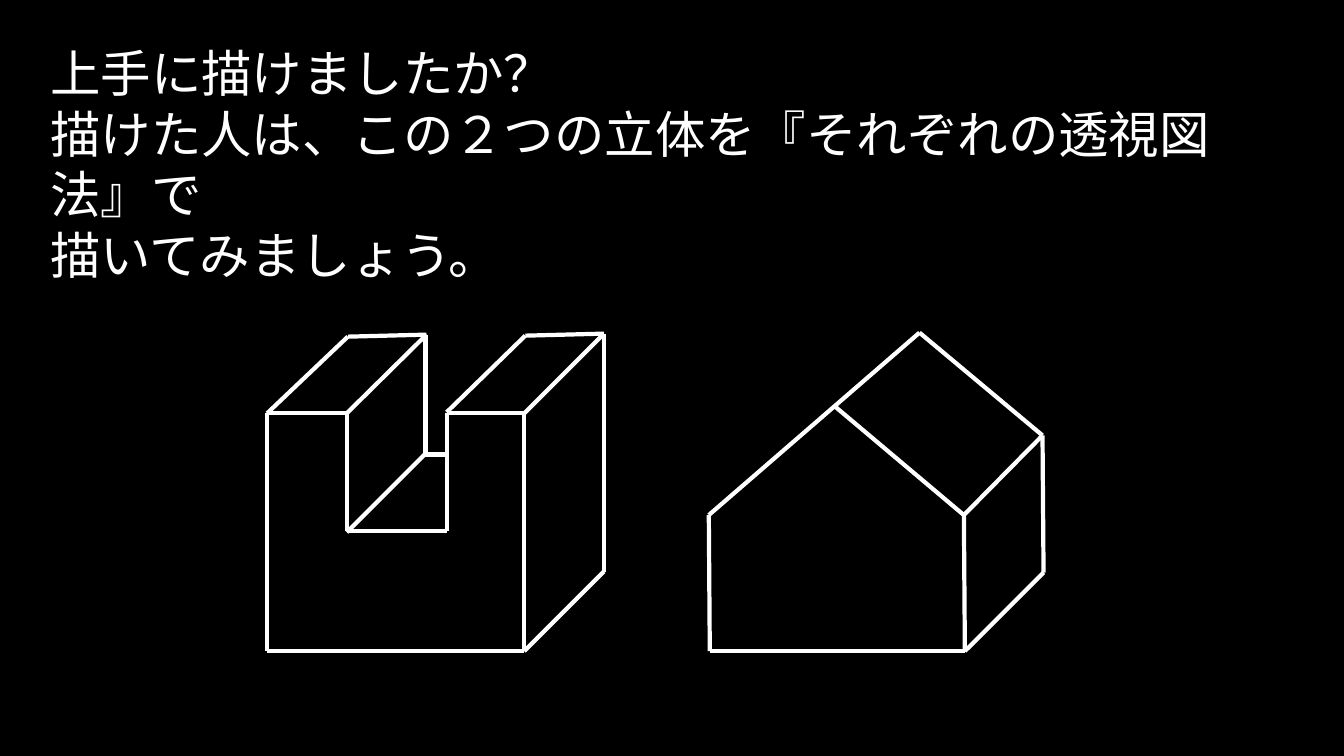
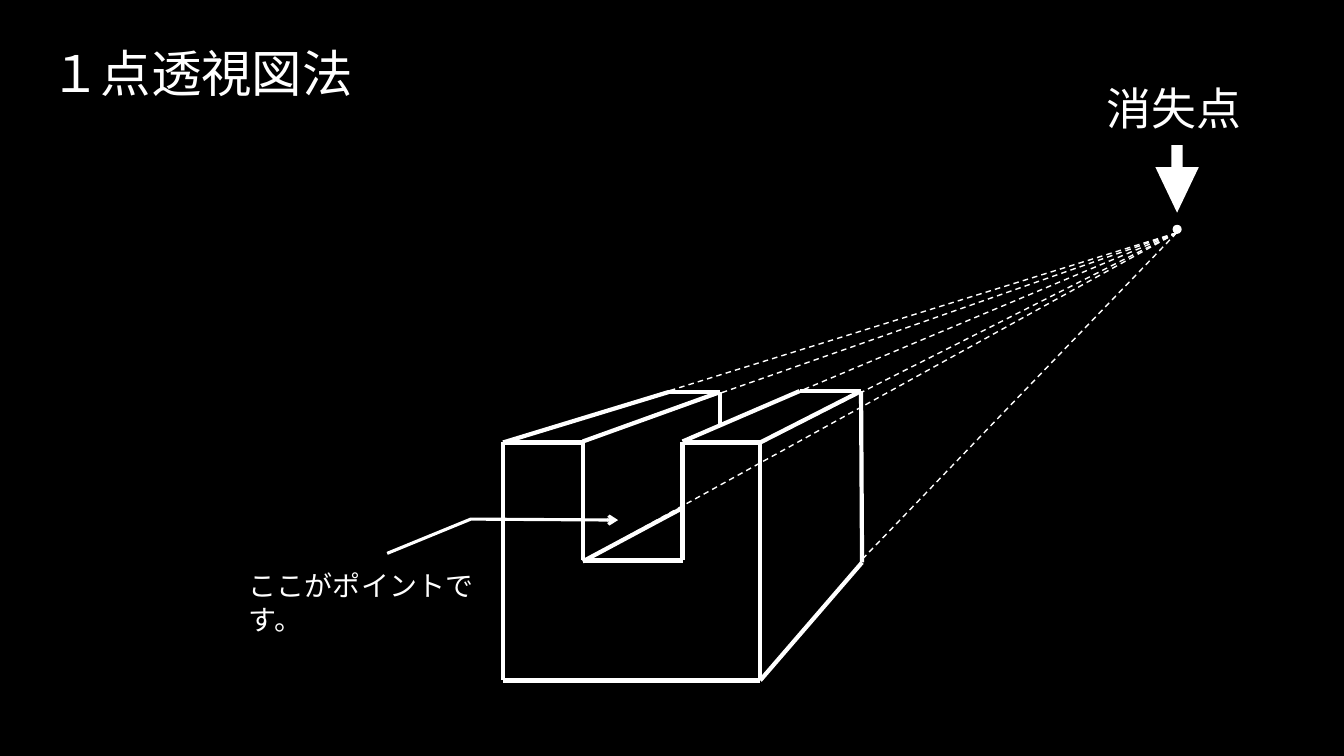
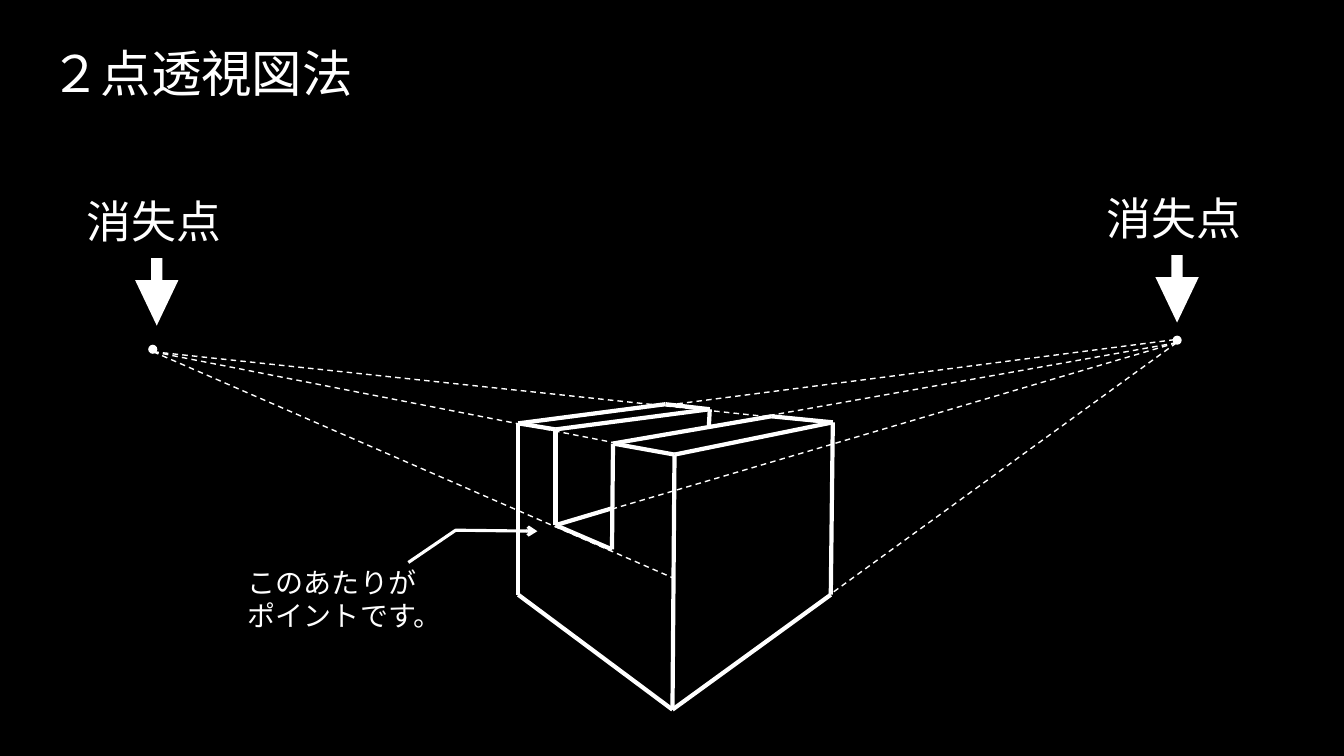
"""Build three slides on drawing solids in one- and two-point perspective."""
from itertools import pairwise

from lxml.etree import SubElement
from pptx import Presentation
from pptx.dml.color import RGBColor
from pptx.enum.dml import MSO_LINE
from pptx.enum.shapes import MSO_CONNECTOR, MSO_SHAPE
from pptx.enum.text import MSO_AUTO_SIZE, PP_ALIGN
from pptx.oxml.ns import qn
from pptx.util import Inches, Pt

FONT = "Noto Sans CJK JP"
BLACK, WHITE = "000000", "FFFFFF"
EDGE, CALLOUT, RAY = 3, 2.25, 1
TITLE_SIZE, LABEL_SIZE, NOTE_SIZE = 36, 32, 20
TITLE_LEFT, TITLE_TOP = 0.4, 0.37
DOT = 0.09
VANISHING_LABEL = "消失点"
BLOCK_FRONT = [(0, 0), (0, 2.36), (2.55, 2.36), (2.55, 0), (1.78, 0),
               (1.78, 1.17), (0.79, 1.17), (0.79, 0), (0, 0)]


def block_front(left, top):
    return [(left + x, top + y) for x, y in BLOCK_FRONT]


SLIDES = [
    {
        "title": ["上手に描けましたか？",
                  "描けた人は、この２つの立体を『それぞれの透視図法』で",
                  "描いてみましょう。"],
        "title_size": (12.6, 1.92),
        "edges": [
            block_front(2.65, 4.1),
            [(5.2, 6.46), (5.99, 5.67), (5.99, 3.31), (5.2, 4.1)],
            [(4.43, 4.09), (5.21, 3.33), (5.99, 3.31)],
            [(2.65, 4.1), (3.45, 3.34), (4.23, 3.32), (3.44, 4.1)],
            [(3.44, 5.28), (4.22, 4.5), (4.22, 3.32)],
            [(4.22, 4.51), (4.41, 4.51)],
            [(7.03, 5.11), (7.04, 6.46), (9.57, 6.46), (9.56, 5.11), (8.29, 4.04)],
            [(7.03, 5.11), (9.12, 3.3), (10.34, 4.32), (10.35, 5.68), (9.57, 6.46)],
            [(10.34, 4.32), (9.56, 5.11)],
        ],
    },
    {
        "title": ["１点透視図法"],
        "title_size": (3.43, 0.71),
        "edges": [
            block_front(4.99, 4.39),
            [(7.54, 6.75), (8.55, 5.58), (8.54, 3.88), (7.54, 4.39)],
            [(6.77, 4.38), (7.93, 3.88), (8.54, 3.88)],
            [(4.99, 4.39), (6.63, 3.89), (7.14, 3.89), (5.78, 4.38)],
            [(7.14, 3.89), (7.14, 4.23)],
            [(5.78, 5.57), (6.77, 5.04)],
        ],
        "vanishing": [
            {"label": (10.88, 0.75), "dot": (11.63, 2.23), "focus": (11.67, 2.31),
             "targets": [(4.99, 4.39), (5.78, 4.38), (6.77, 4.37),
                         (7.54, 4.4), (5.79, 5.56), (8.54, 5.56)]},
        ],
        "note": (["ここがポイントです。"], (2.37, 5.59, 2.46, 0.44)),
        "callout": [(3.84, 5.49), (4.67, 5.15), (6.13, 5.16)],
    },
    {
        "title": ["２点透視図法"],
        "title_size": (3.43, 0.71),
        "edges": [
            [(5.14, 4.2), (5.14, 5.9), (6.67, 7.04), (8.24, 5.9),
             (8.26, 4.19), (6.69, 4.51), (6.67, 7.04)],
            [(5.14, 4.2), (6.6, 4.01), (7.04, 4.06), (5.51, 4.26), (5.14, 4.2)],
            [(7.04, 4.06), (7.03, 4.24)],
            [(5.51, 4.26), (5.51, 5.21), (6.07, 5.45), (6.08, 4.4),
             (7.65, 4.13), (8.26, 4.19)],
            [(6.08, 4.4), (6.69, 4.51)],
            [(5.51, 5.21), (6.08, 5.04)],
        ],
        "vanishing": [
            {"label": (0.76, 1.87), "dot": (1.47, 3.42), "focus": (1.52, 3.49),
             "targets": [(8.24, 4.2), (6.69, 4.51), (6.69, 5.74)]},
            {"label": (10.88, 1.84), "dot": (11.63, 3.33), "focus": (11.67, 3.4),
             "targets": [(6.08, 4.4), (6.07, 5.05), (6.66, 7.04)]},
            {"label": (10.88, 1.84), "dot": (11.63, 3.33), "focus": (11.65, 3.37),
             "targets": [(5.14, 4.21)]},
        ],
        "note": (["このあたりが", "ポイントです。"], (2.36, 5.56, 1.88, 0.77)),
        "callout": [(4.05, 5.58), (4.52, 5.26), (5.33, 5.27)],
    },
]


def color(value):
    return RGBColor.from_string(value)


def inches(*lengths):
    return [Inches(length) for length in lengths]


def add_text(slide, lines, box, size, align=None):
    frame = slide.shapes.add_textbox(*inches(*box)).text_frame
    frame.word_wrap = True
    frame.auto_size = MSO_AUTO_SIZE.SHAPE_TO_FIT_TEXT
    for number, line in enumerate(lines):
        paragraph = frame.add_paragraph() if number else frame.paragraphs[0]
        paragraph.alignment = align
        run = paragraph.add_run()
        run.text = line
        run.font.size = Pt(size)
        run.font.name = FONT
        run.font.color.rgb = color(WHITE)
        SubElement(run.font._element, qn("a:ea"), typeface=FONT)


def add_line(slide, start, end, width, dash=None):
    line = slide.shapes.add_connector(MSO_CONNECTOR.STRAIGHT, *inches(*start, *end))
    line.line.color.rgb = color(WHITE)
    line.line.width = Pt(width)
    line.line.dash_style = dash
    SubElement(line._element.spPr, qn("a:effectLst"))


def add_solid_shape(slide, kind, box):
    shape = slide.shapes.add_shape(kind, *inches(*box))
    shape.shadow.inherit = False
    shape.fill.solid()
    shape.fill.fore_color.rgb = color(WHITE)
    shape.line.fill.background()
    return shape


def add_marker(slide, label, dot):
    left, top = label
    add_text(slide, [VANISHING_LABEL], (left, top, 1.59, 0.64), LABEL_SIZE,
             PP_ALIGN.JUSTIFY)
    arrow = add_solid_shape(slide, MSO_SHAPE.LEFT_ARROW,
                            (left + 0.46, top + 0.81, 0.67, 0.43))
    arrow.rotation = 270
    arrow.adjustments[0], arrow.adjustments[1] = 0.26, 1.05
    add_solid_shape(slide, MSO_SHAPE.OVAL, (*dot, DOT, DOT))


def add_callout(slide, points):
    start, *rest = [inches(*point) for point in points]
    builder = slide.shapes.build_freeform(*start)
    builder.add_line_segments(rest, close=False)
    shape = builder.convert_to_shape()
    shape.shadow.inherit = False
    shape.fill.background()
    shape.line.color.rgb = color(WHITE)
    shape.line.width = Pt(CALLOUT)
    SubElement(shape.line._get_or_add_ln(), qn("a:tailEnd"), type="arrow")


def add_slide(presentation, content):
    slide = presentation.slides.add_slide(presentation.slide_layouts[6])
    add_text(slide, content["title"],
             (TITLE_LEFT, TITLE_TOP, *content["title_size"]), TITLE_SIZE)
    markers = {}
    for vanishing in content.get("vanishing", []):
        markers[vanishing["label"]] = vanishing["dot"]
        for target in vanishing["targets"]:
            add_line(slide, vanishing["focus"], target, RAY, MSO_LINE.DASH)
    for label, dot in markers.items():
        add_marker(slide, label, dot)
    for chain in content["edges"]:
        for start, end in pairwise(chain):
            add_line(slide, start, end, EDGE)
    if "note" in content:
        add_text(slide, *content["note"], NOTE_SIZE)
        add_callout(slide, content["callout"])


def main():
    presentation = Presentation()
    presentation.slide_width, presentation.slide_height = inches(13.33, 7.5)
    background = presentation.slide_master.background.fill
    background.solid()
    background.fore_color.rgb = color(BLACK)
    for content in SLIDES:
        add_slide(presentation, content)
    presentation.save("out.pptx")


if __name__ == "__main__":
    main()
